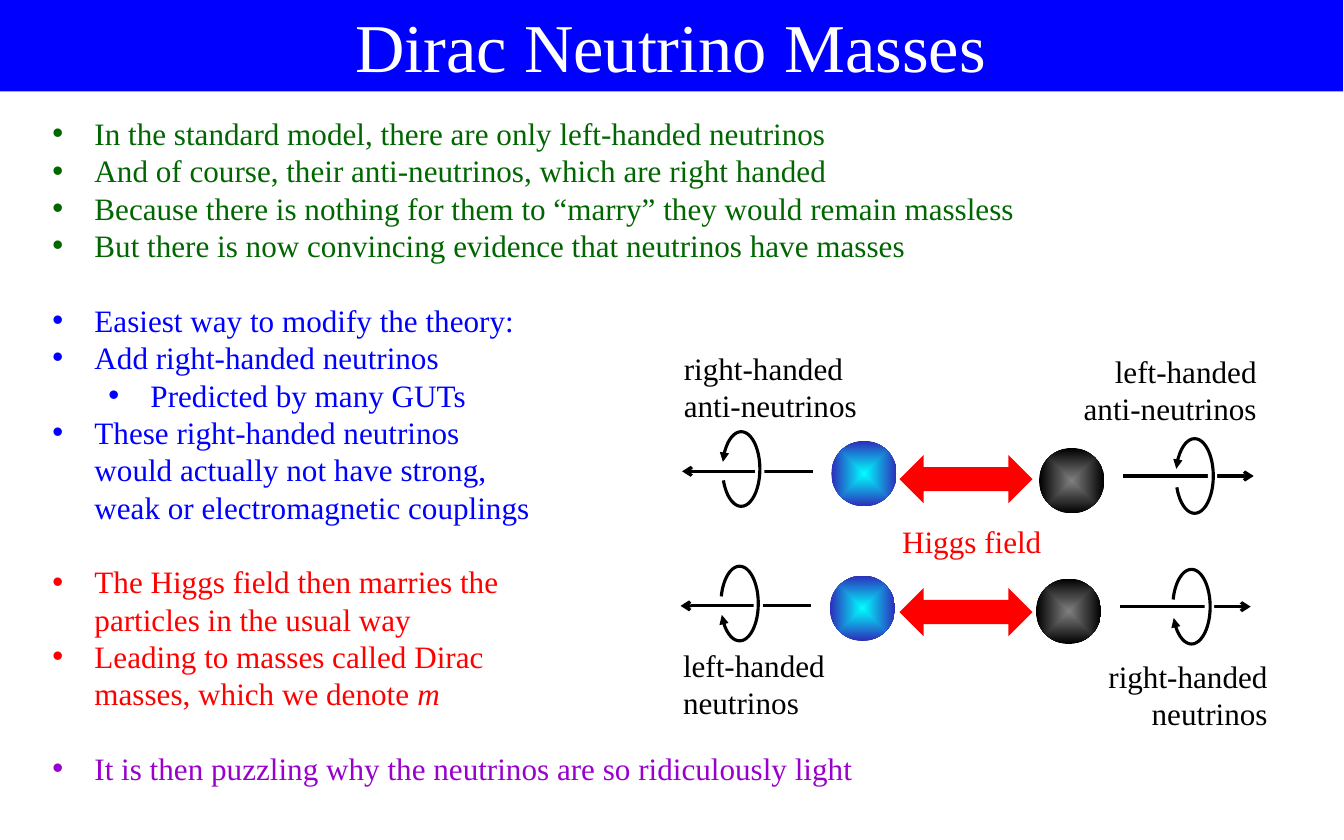
from lxml import etree
from pptx import Presentation
from pptx.dml.color import RGBColor
from pptx.enum.shapes import MSO_CONNECTOR, MSO_SHAPE
from pptx.enum.text import MSO_ANCHOR, MSO_AUTO_SIZE, PP_ALIGN
from pptx.oxml.ns import qn
from pptx.util import Pt

LEFT, CENTER, RIGHT = PP_ALIGN.LEFT, PP_ALIGN.CENTER, PP_ALIGN.RIGHT
RECT, OVAL, ARC = MSO_SHAPE.RECTANGLE, MSO_SHAPE.OVAL, MSO_SHAPE.ARC
DOUBLE_ARROW = MSO_SHAPE.LEFT_RIGHT_ARROW
STRAIGHT = MSO_CONNECTOR.STRAIGHT
TOP, MIDDLE = MSO_ANCHOR.TOP, MSO_ANCHOR.MIDDLE
NO_FIT = MSO_AUTO_SIZE.NONE

COLORS = {
    "black": "000000", "white": "FFFFFF", "blue": "0000FF", "red": "FF0000",
    "green": "006600", "purple": "9900CC", "gray": "808080",
    "cyan": "00FFFF", "indigo": "2D2DB9",
}
BALL, LINE_PITCH, INDENT = 42, 24, 27

BULLETS = [
    ("green", 0, [
        "In the standard model, there are only left-handed neutrinos",
        "And of course, their anti-neutrinos, which are right handed",
        "Because there is nothing for them to “marry” they would remain massless",
        "But there is now convincing evidence that neutrinos have masses"]),
    ("blue", LINE_PITCH, [
        "Easiest way to modify the theory:",
        "Add right-handed neutrinos",
        "\tPredicted by many GUTs",
        "These right-handed neutrinos\nwould actually not have strong,\n"
        "weak or electromagnetic couplings"]),
    ("red", LINE_PITCH, [
        "The Higgs field then marries the\nparticles in the usual way",
        "Leading to masses called Dirac\nmasses, which we denote *m"]),
    ("purple", LINE_PITCH, [
        "It is then puzzling why the neutrinos are so ridiculously light"]),
]

SIDES = {
    "left": dict(ball=("cyan", "indigo"), line=(-12, -96, 19.5), mask=-49, arc=-70, align=LEFT),
    "right": dict(ball=("gray", "black"), line=(54, 138, 18), mask=108.5, arc=88, align=RIGHT),
}
PARTICLES = [
    ("right", 666, 372, "tailEnd", (666, 419), ["right-handed", "neutrinos"]),
    ("left", 533.5, 370, "tailEnd", (432, 412), ["left-handed neutrinos"]),
    ("left", 534.5, 283.5, "headEnd", (432.5, 221), ["right-handed anti-neutrinos"]),
    ("right", 668, 288, "headEnd", (659, 223), ["left-handed", "anti-neutrinos"]),
]


class SlideBuilder:
    font, size = "Times New Roman", 20

    def __init__(self, s):
        self.s = s
        self.shapes = s.shapes

    def rgb(self, name):
        return RGBColor.from_string(COLORS[name])

    def place(self, sp, x, y, w, h):
        sp.left, sp.top, sp.width, sp.height = Pt(x), Pt(y), Pt(w), Pt(h)

    def run(self, p, text, color, size=None, italic=False):
        r = p.add_run()
        r.text = text
        r.font.name, r.font.size = self.font, Pt(size or self.size)
        r.font.color.rgb = self.rgb(color)
        r.font.italic = italic

    def title(self, text, x, y, w, h):
        sp = self.s.shapes.title
        self.place(sp, x, y, w, h)
        sp.fill.solid()
        sp.fill.fore_color.rgb = self.rgb("blue")
        tf = sp.text_frame
        tf.auto_size, tf.vertical_anchor = NO_FIT, MIDDLE
        p = tf.paragraphs[0]
        p.alignment = CENTER
        self.run(p, text, "white", 44)

    def bullet(self, p, text, color, gap):
        level = text.count("\t")
        p.level = level
        p.space_before, p.space_after, p.line_spacing = Pt(gap), Pt(0), Pt(LINE_PITCH)
        pPr = p._p.get_or_add_pPr()
        pPr.set("marL", str(Pt(INDENT + 36 * level)))
        pPr.set("indent", str(-Pt(INDENT)))
        etree.SubElement(pPr, qn("a:buFont"), typeface="Arial")
        etree.SubElement(pPr, qn("a:buChar"), char="•")
        for i, line in enumerate(text.strip().split("\n")):
            if i:
                p.add_line_break()
            plain, _, symbol = line.partition("*")
            self.run(p, plain, color)
            if symbol:
                self.run(p, symbol, color, italic=True)

    def body(self, groups, x, y, w, h):
        sp = self.s.placeholders[1]
        self.place(sp, x, y, w, h)
        tf = sp.text_frame
        tf.auto_size, tf.vertical_anchor = NO_FIT, TOP
        p = tf.paragraphs[0]
        for color, gap, texts in groups:
            for i, text in enumerate(texts):
                if p is None:
                    p = tf.add_paragraph()
                self.bullet(p, text, color, 0 if i else gap)
                p = None

    def label(self, lines, x, y, w, h, align, color="black"):
        tf = self.shapes.add_textbox(Pt(x), Pt(y), Pt(w), Pt(h)).text_frame
        tf.word_wrap = True
        for i, line in enumerate(lines):
            p = tf.add_paragraph() if i else tf.paragraphs[0]
            p.alignment, p.line_spacing = align, Pt(LINE_PITCH)
            self.run(p, line, color)

    def shape(self, kind, x, y, w, h, fill=None):
        sp = self.shapes.add_shape(kind, Pt(x), Pt(y), Pt(w), Pt(h))
        sp.shadow.inherit = False
        sp.line.fill.background()
        if fill:
            sp.fill.solid()
            sp.fill.fore_color.rgb = self.rgb(fill)
        else:
            sp.fill.background()
        return sp

    def ball(self, x, y, inner, outer):
        sp = self.shape(OVAL, x, y, BALL, BALL)
        sp.fill.gradient()
        for stop, color, pos in zip(sp.fill.gradient_stops, (inner, outer), (0, 1)):
            stop.color.rgb, stop.position = self.rgb(color), pos
        grad = sp._element.spPr.find(qn("a:gradFill"))
        grad.remove(grad.find(qn("a:lin")))
        shading = etree.SubElement(grad, qn("a:path"), path="shape")
        etree.SubElement(shading, qn("a:fillToRect"), l="50000", t="50000", r="50000", b="50000")

    def stroke(self, sp, end, head):
        sp.line.color.rgb, sp.line.width = self.rgb("black"), Pt(2)
        etree.SubElement(sp.line._get_or_add_ln(), qn("a:" + end), type=head)

    def arrow(self, x1, x2, y):
        c = self.shapes.add_connector(STRAIGHT, Pt(x1), Pt(y), Pt(x2), Pt(y))
        self.stroke(c, "tailEnd", "arrow")
        etree.SubElement(c._element.spPr, qn("a:effectLst"))

    def spin(self, x, y, end):
        sp = self.shape(ARC, x, y, 24, 48)
        sp.adjustments[0], sp.adjustments[1] = 120.8, 88.44
        self.stroke(sp, end, "triangle")

    def particle(self, side, x, y, spin_end, label_at, lines):
        style = SIDES[side]
        self.shapes = self.s.shapes.add_group_shape().shapes
        start, stop, dy = style["line"]
        self.ball(x, y, *style["ball"])
        self.arrow(x + start, x + stop, y + dy)
        self.shape(RECT, x + style["mask"], y, 6, BALL, "white")
        self.spin(x + style["arc"], y - 6, spin_end)
        self.label(lines, *label_at, 156, 55.5, style["align"])
        self.shapes = self.s.shapes


def main():
    prs = Presentation()
    prs.slide_width, prs.slide_height = Pt(864), Pt(540)
    b = SlideBuilder(prs.slides.add_slide(prs.slide_layouts[1]))
    b.title("Dirac Neutrino Masses", -0.75, -1.25, 864, 60)
    b.body(BULLETS, 26.5, 70, 765, 443.5)
    for particle in PARTICLES:
        b.particle(*particle)
    for y in (378, 292.5):
        b.shape(DOUBLE_ARROW, 578.25, y, 85.5, 31, "red")
    b.label(["Higgs field"], 531.5, 332, 186.5, 31.5, CENTER, "red")
    prs.save("out.pptx")


if __name__ == "__main__":
    main()
